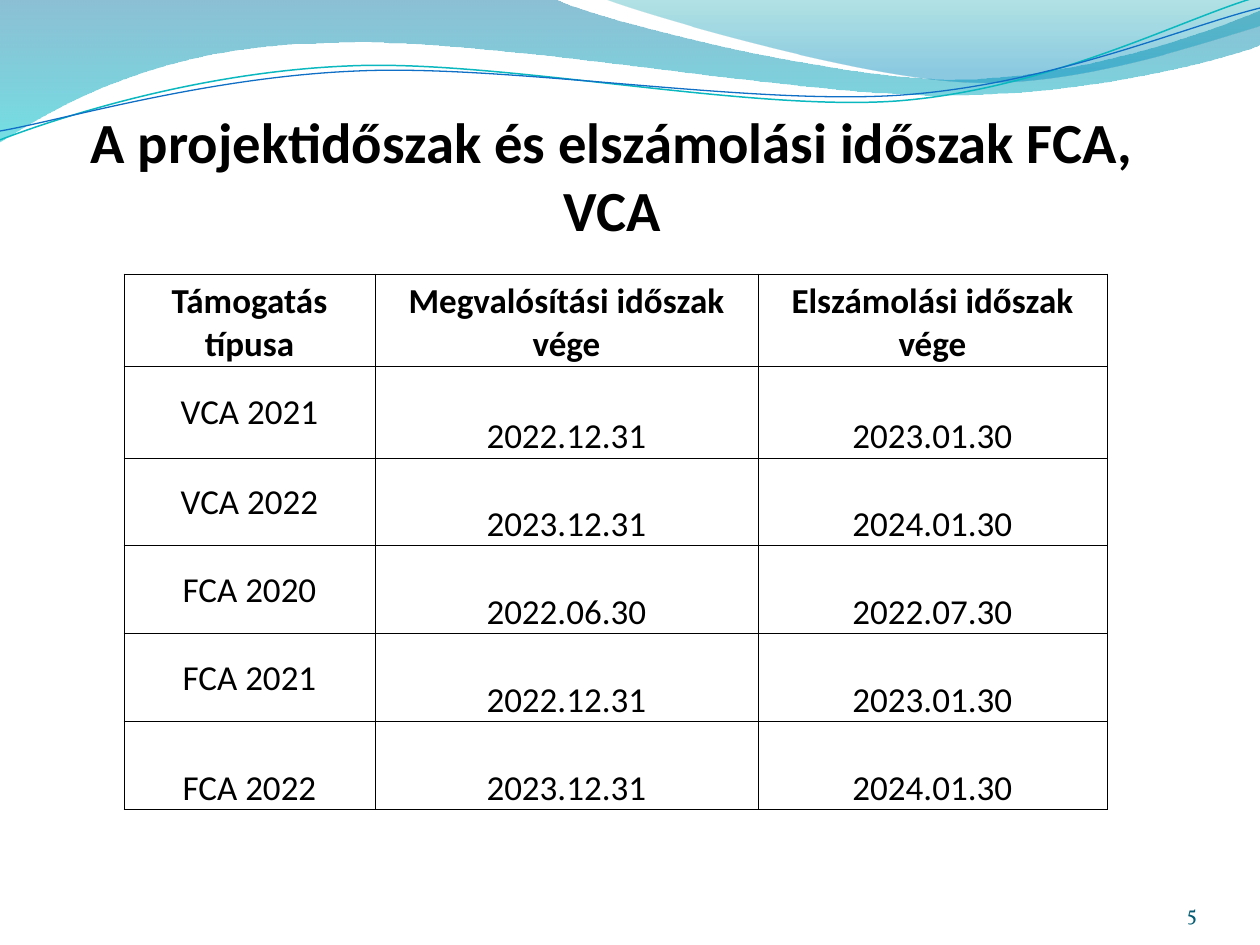
from math import cos, radians, sin

from lxml import etree
from pptx import Presentation
from pptx.dml.color import RGBColor
from pptx.enum.text import MSO_ANCHOR, PP_ALIGN
from pptx.oxml.ns import qn
from pptx.util import Pt

PX = 914400 / 126
CENTER, RIGHT = PP_ALIGN.CENTER, PP_ALIGN.RIGHT
MIDDLE, BOTTOM = MSO_ANCHOR.MIDDLE, MSO_ANCHOR.BOTTOM
LINE_TILT = -2.7

COLORS = {
    "black": "000000",
    "number": "045D75",
    "deep_blue": "0074A1",
    "cyan": "00C6CF",
    "teal": "00A1A9",
    "sky": "008BBF",
    "teal_line": "0AB8BF",
    "blue_line": "0F6FC6",
}

FILLED_WAVES = [
    {
        "outline": [
            [(0, 0)], [(554, -1)],
            [(600, 21), (837, 79), (955, 79)],
            [(1075, 79), (1207, 33), (1260, 11)],
            [(1261, 45)],
            [(1237, 55), (1096, 96), (940, 95)],
            [(784, 95), (481, 35), (324, 43)],
            [(163, 45), (58, 105), (-1, 142)],
            [(0, 0)],
        ],
        "stops": [(0, "deep_blue", 45), (1, "cyan", 55)],
    },
    {
        "outline": [
            [(604, -1)],
            [(641, 14), (859, 78), (969, 82)],
            [(1079, 87), (1211, 40), (1260, 26)],
            [(1260, 0)],
            [(604, -1)],
        ],
        "stops": [(0, "teal", 30), (0.8, "sky", 45)],
    },
]
LINE_WAVES = [
    {
        "outline": [
            [(0, 140)],
            [(60, 117), (199, 72), (349, 66)],
            [(498, 59), (747, 112), (898, 101)],
            [(1050, 89), (1182, 19), (1257, -3)],
        ],
        "center": (629, 72),
        "color": "teal_line",
        "width": 0.85,
    },
    {
        "outline": [
            [(0, 131)],
            [(59, 121), (207, 77), (357, 71)],
            [(508, 64), (752, 106), (903, 95)],
            [(1053, 84), (1186, 26), (1260, 8)],
        ],
        "center": (629, 74),
        "color": "blue_line",
        "width": 0.75,
    },
]

HEADERS = ["Támogatás típusa", "Megvalósítási időszak vége", "Elszámolási időszak vége"]
PERIODS = [
    ["VCA 2021", "2022.12.31", "2023.01.30"],
    ["VCA 2022", "2023.12.31", "2024.01.30"],
    ["FCA 2020", "2022.06.30", "2022.07.30"],
    ["FCA 2021", "2022.12.31", "2023.01.30"],
    ["FCA 2022", "2023.12.31", "2024.01.30"],
]
COLUMN_WIDTHS = [251, 383, 349]
ROW_HEIGHTS = [92, 92, 88, 88, 88, 88]


def px(value):
    return round(value * PX)


def rgb(name):
    return RGBColor.from_string(COLORS[name])


def set_all(target, values):
    for name, value in values.items():
        setattr(target, name, value)


def write(para, text, align, color, **font):
    para.alignment = align
    span = para.add_run()
    span.text = text
    set_all(span.font, font)
    span.font.color.rgb = rgb(color)


def turn(point, center, degrees):
    angle = radians(degrees)
    dx, dy = point[0] - center[0], point[1] - center[1]
    return (center[0] + dx * cos(angle) - dy * sin(angle),
            center[1] + dx * sin(angle) + dy * cos(angle))


def add_outline(page, box, outline, close):
    left, top = box
    points = [(px(left + x), px(top + y)) for segment in outline for x, y in segment]
    builder = page.shapes.build_freeform(*points[0], scale=1.0)
    builder.add_line_segments(points[1:], close=close)
    shape = builder.convert_to_shape()
    shape.shadow.inherit = False
    steps = iter(list(shape._element.spPr.iter(qn("a:lnTo"))))
    for segment in outline[1:]:
        first, *others = [next(steps) for _ in segment]
        if others:
            first.tag_parent = first.getparent()
            curve = etree.Element(qn("a:cubicBezTo"))
            first.addprevious(curve)
            for step in (first, *others):
                curve.append(step[0])
                step.getparent().remove(step)
    return shape


def fill_gradient(shape, stops):
    shape.fill.gradient()
    shape.fill.gradient_angle = 270
    for stop, (position, color, _) in zip(shape.fill.gradient_stops, stops):
        stop.position = position
        stop.color.rgb = rgb(color)
    colors = shape._element.spPr.iter(qn("a:srgbClr"))
    for node, (_, _, opacity) in zip(list(colors), stops):
        etree.SubElement(node, qn("a:alpha"), val=str(opacity * 1000))


def add_waves(page, box):
    for wave in FILLED_WAVES:
        shape = add_outline(page, box, wave["outline"], True)
        fill_gradient(shape, wave["stops"])
        shape.line.fill.background()
    for wave in LINE_WAVES:
        level = [[turn(point, wave["center"], -LINE_TILT) for point in segment]
                 for segment in wave["outline"]]
        shape = add_outline(page, box, level, False)
        shape.rotation = LINE_TILT
        shape.fill.background()
        shape.line.color.rgb = rgb(wave["color"])
        shape.line.width = Pt(wave["width"])


def add_text(page, box, text, align, color, inset=0, **font):
    frame = page.shapes.add_textbox(*map(px, box)).text_frame
    set_all(frame, {
        "word_wrap": True, "vertical_anchor": BOTTOM,
        "margin_left": 0, "margin_right": 0, "margin_bottom": 0, "margin_top": px(inset),
    })
    write(frame.paragraphs[0], text, align, color, **font)


def add_borders(cell):
    properties = cell._tc.get_or_add_tcPr()
    for index, side in enumerate(("lnL", "lnR", "lnT", "lnB")):
        line = etree.Element(qn(f"a:{side}"), w=str(Pt(0.5)))
        fill = etree.SubElement(line, qn("a:solidFill"))
        etree.SubElement(fill, qn("a:srgbClr"), val=COLORS["black"])
        properties.insert(index, line)


def add_periods_table(page, box):
    left, top = box
    rows = [HEADERS, *PERIODS]
    table = page.shapes.add_table(
        len(rows), len(HEADERS), px(left), px(top), px(sum(COLUMN_WIDTHS)), px(sum(ROW_HEIGHTS))
    ).table
    set_all(table, {"first_row": False, "horz_banding": False})
    for column, width in zip(table.columns, COLUMN_WIDTHS):
        column.width = px(width)
    for r, (row, height) in enumerate(zip(rows, ROW_HEIGHTS)):
        table.rows[r].height = px(height)
        for c, text in enumerate(row):
            cell = table.cell(r, c)
            centered = c == 0 and 0 < r < len(rows) - 1
            set_all(cell, {
                "vertical_anchor": MIDDLE if centered else BOTTOM,
                "margin_left": px(1), "margin_right": px(1),
                "margin_top": px(1), "margin_bottom": 0,
            })
            cell.fill.background()
            add_borders(cell)
            write(cell.text_frame.paragraphs[0], text, CENTER, "black",
                  name="Calibri", size=Pt(20), bold=r == 0)


def main():
    deck = Presentation()
    set_all(deck, {"slide_width": px(1260), "slide_height": px(945)})
    page = deck.slides.add_slide(deck.slide_layouts[6])
    add_waves(page, (0, 0))
    add_text(page, (45, 106, 1134, 137), "A projektidőszak és elszámolási időszak FCA, VCA",
             CENTER, "black", inset=6, name="Calibri", size=Pt(32.4), bold=True)
    add_periods_table(page, (124, 274))
    add_text(page, (1092, 876, 105, 50), "5", RIGHT, "number", name="Vollkorn", size=Pt(12))
    deck.save("out.pptx")


if __name__ == "__main__":
    main()
